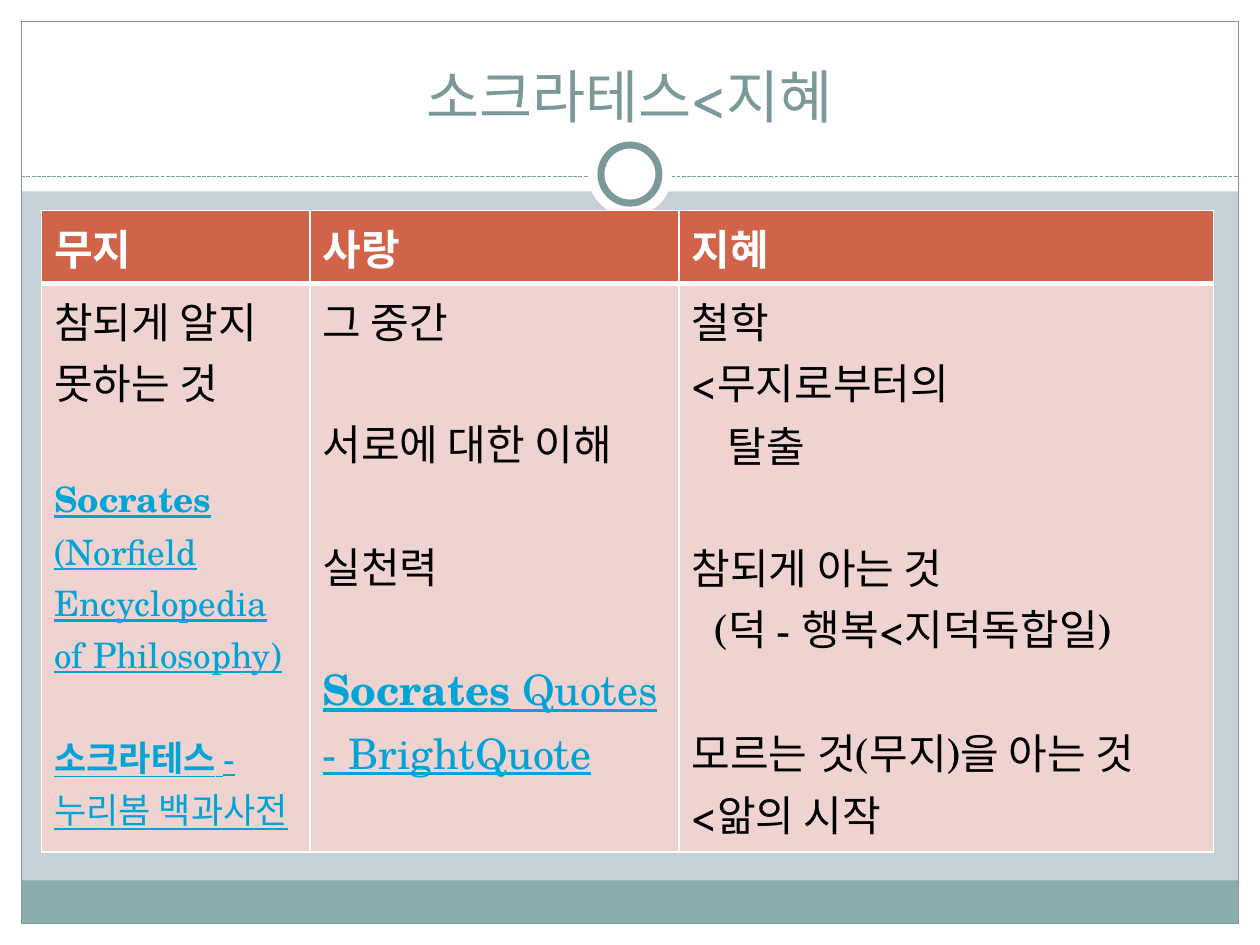
from dataclasses import dataclass

from lxml.etree import SubElement
from pptx import Presentation
from pptx.dml.color import RGBColor
from pptx.enum.dml import MSO_LINE
from pptx.enum.shapes import MSO_CONNECTOR, MSO_SHAPE
from pptx.enum.text import MSO_ANCHOR, PP_ALIGN
from pptx.oxml.ns import qn
from pptx.util import Cm, Pt

FONT = "TeX Gyre Schola"
WHITE = RGBColor(0xFF, 0xFF, 0xFF)
BLACK = RGBColor(0, 0, 0)
MIST = RGBColor(0xC5, 0xD1, 0xD7)
TEAL = RGBColor(0x8C, 0xAD, 0xAE)
SLATE = RGBColor(0x7C, 0x99, 0x9A)
BRICK = RGBColor(0xD1, 0x63, 0x49)
BLUSH = RGBColor(0xEE, 0xD3, 0xD0)
LINK = RGBColor(0x00, 0xA3, 0xD6)

WIDTH, HEIGHT, MARGIN = 25.4, 19.05, 0.43
INNER = WIDTH - 2 * MARGIN


@dataclass
class Panel:
    left: float
    top: float
    width: float
    height: float
    fill: RGBColor | None = WHITE
    line_width: float = 0
    kind: MSO_SHAPE = MSO_SHAPE.RECTANGLE


@dataclass
class Line:
    """One paragraph; a link has a bold keyword ahead of its text."""
    text: str
    keyword: str = ""
    size: float = 24
    gap: float = 0
    indent: float = 0


@dataclass
class Column:
    heading: str
    width: float
    lines: list[Line]


def ring(diameter: float, line_width: float = 0) -> Panel:
    return Panel((WIDTH - diameter) / 2, 3.51 - diameter / 2, diameter, diameter,
                 WHITE, line_width, MSO_SHAPE.OVAL)


BACKDROP = [
    Panel(0, HEIGHT - MARGIN, WIDTH, MARGIN),
    Panel(0, 0, WIDTH, 3.86),
    Panel(0, 0, MARGIN, HEIGHT),
    Panel(WIDTH - MARGIN, 0, MARGIN, HEIGHT),
    Panel(MARGIN, 17.75, INNER, 0.87, TEAL),
    Panel(MARGIN, MARGIN, INNER, HEIGHT - 2 * MARGIN, None, 0.75),
]
RINGS = [ring(1.7), ring(1.17, 4)]

COLUMNS = [
    Column("무지", 5.41, [
        Line("참되게 알지"),
        Line("못하는 것"),
        Line(" (Norfield Encyclopedia of Philosophy)", "Socrates", 20, 34),
        Line(" - 누리봄 백과사전", "소크라테스", 20, 29),
    ]),
    Column("사랑", 7.44, [
        Line("그 중간"),
        Line("서로에 대한 이해", gap=35),
        Line("실천력", gap=35),
        Line(" Quotes - BrightQuote", "Socrates", gap=35),
    ]),
    Column("지혜", 10.77, [
        Line("철학"),
        Line("<무지로부터의"),
        Line("탈출", indent=0.73),
        Line("참되게 아는 것", gap=35),
        Line("(덕 - 행복<지덕독합일)", indent=0.45),
        Line("모르는 것(무지)을 아는 것", gap=35),
        Line("<앎의 시작"),
    ]),
]


def draw_panel(slide, panel: Panel) -> None:
    shape = slide.shapes.add_shape(panel.kind, Cm(panel.left), Cm(panel.top),
                                   Cm(panel.width), Cm(panel.height))
    shape.shadow.inherit = False
    if panel.fill is None:
        shape.fill.background()
    else:
        shape.fill.solid()
        shape.fill.fore_color.rgb = panel.fill
    if panel.line_width:
        shape.line.color.rgb = SLATE
        shape.line.width = Pt(panel.line_width)
    else:
        shape.line.fill.background()


def draw_divider(slide) -> None:
    divider = slide.shapes.add_connector(MSO_CONNECTOR.STRAIGHT, Cm(MARGIN), Cm(3.56),
                                         Cm(WIDTH - MARGIN), Cm(3.56))
    divider.line.color.rgb = SLATE
    divider.line.width = Pt(0.75)
    divider.line.dash_style = MSO_LINE.SQUARE_DOT
    SubElement(divider._element.spPr, qn("a:effectLst"))


def style(font, size: float, color: RGBColor, bold: bool = False) -> None:
    font.name, font.size, font.bold = FONT, Pt(size), bold
    font.color.rgb = color


def draw_title(slide, text: str) -> None:
    frame = slide.shapes.add_textbox(Cm(0.84), Cm(0.64), Cm(23.7), Cm(2.11)).text_frame
    frame.word_wrap = True
    frame.vertical_anchor = MSO_ANCHOR.BOTTOM
    title = frame.paragraphs[0]
    title.text = text
    title.alignment = PP_ALIGN.CENTER
    style(title.font, 33, SLATE)


def paint_cell(cell, fill: RGBColor, top: float, bottom: float) -> None:
    """Fill a cell and give it white borders, widths in points."""
    props = cell._tc.get_or_add_tcPr()
    for side, width in (("L", 1), ("R", 1), ("T", top), ("B", bottom)):
        border = SubElement(props, qn(f"a:ln{side}"), w=str(Pt(width)))
        SubElement(SubElement(border, qn("a:solidFill")), qn("a:srgbClr"), val=str(WHITE))
    cell.fill.solid()
    cell.fill.fore_color.rgb = fill


def write_line(paragraph, line: Line) -> None:
    paragraph.space_before = Pt(line.gap)
    if line.indent:
        paragraph._p.get_or_add_pPr().set("marL", str(Cm(line.indent)))
    if not line.keyword:
        paragraph.text = line.text
        style(paragraph.font, line.size, BLACK)
        return
    for text, bold in ((line.keyword, True), (line.text, False)):
        run = paragraph.add_run()
        run.text = text
        style(run.font, line.size, LINK, bold)
        run.font.underline = True


def draw_table(slide, columns: list[Column]) -> None:
    heights = (1.48, 11.46)
    table = slide.shapes.add_table(2, len(columns), Cm(0.84), Cm(4.24),
                                   Cm(sum(column.width for column in columns)),
                                   Cm(sum(heights))).table
    for row, height in zip(table.rows, heights):
        row.height = Cm(height)
    for index, column in enumerate(columns):
        table.columns[index].width = Cm(column.width)
        head, body = table.cell(0, index), table.cell(1, index)
        paint_cell(head, BRICK, 1, 3)
        paint_cell(body, BLUSH, 3, 1)
        heading = head.text_frame.paragraphs[0]
        heading.text = column.heading
        style(heading.font, 24, WHITE, True)
        frame = body.text_frame
        for number, line in enumerate(column.lines):
            write_line(frame.add_paragraph() if number else frame.paragraphs[0], line)


def main() -> None:
    deck = Presentation()
    deck.slide_width, deck.slide_height = Cm(WIDTH), Cm(HEIGHT)
    slide = deck.slides.add_slide(deck.slide_layouts[6])
    slide.background.fill.solid()
    slide.background.fill.fore_color.rgb = MIST
    for panel in BACKDROP:
        draw_panel(slide, panel)
    draw_divider(slide)
    for panel in RINGS:
        draw_panel(slide, panel)
    draw_title(slide, "소크라테스<지혜")
    draw_table(slide, COLUMNS)
    deck.save("out.pptx")


if __name__ == "__main__":
    main()
